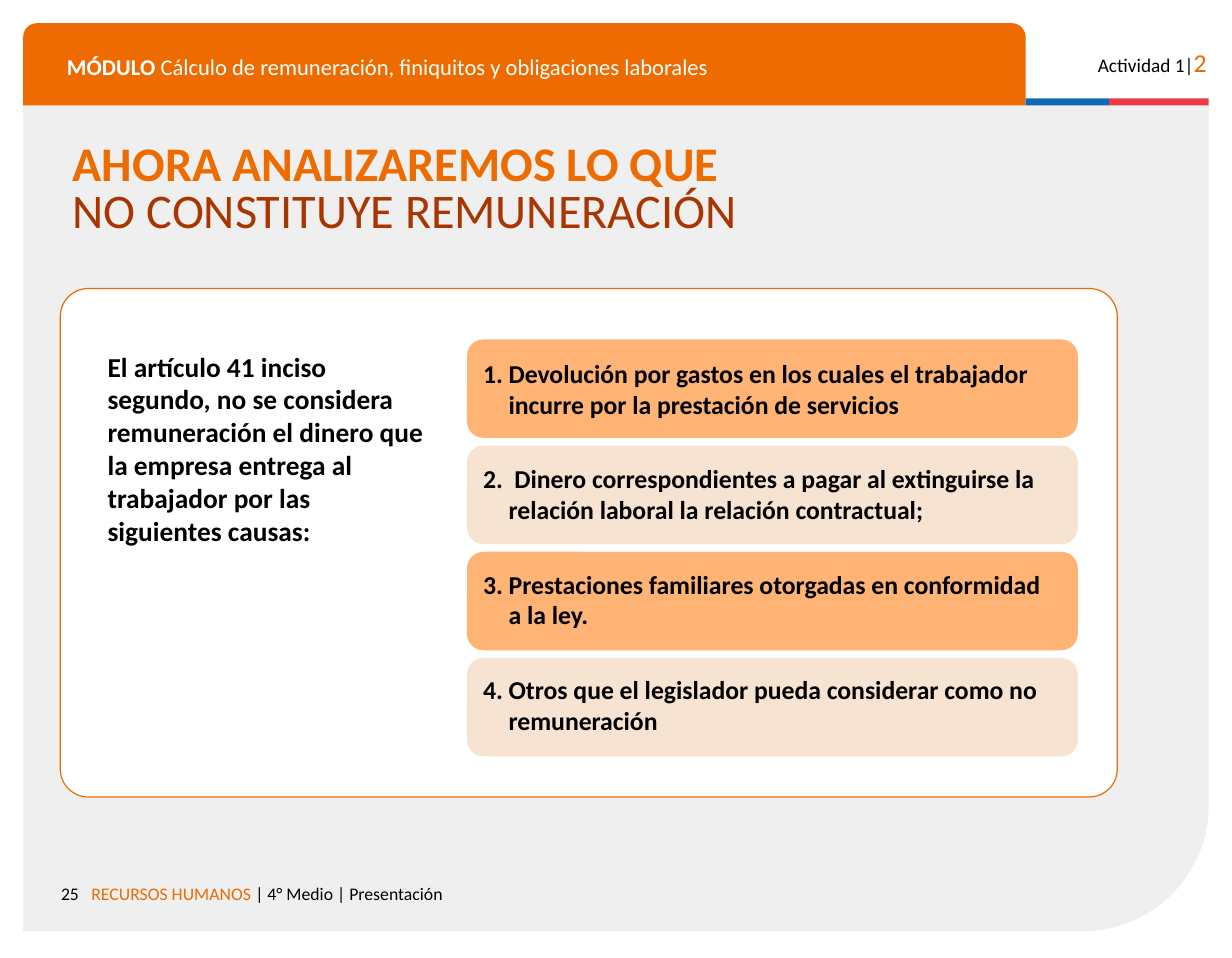
from lxml import etree
from pptx import Presentation
from pptx.dml.color import RGBColor
from pptx.enum import shapes, text
from pptx.oxml.ns import qn
from pptx.util import Emu, Pt

PX = 9144  # EMU per px, 100 px to the inch
SLIDE = (1063, 827)
FONT = "Calibri"
COLORS = {
    "black": "000000", "white": "FFFFFF", "panel": "EFEFEF", "orange": "ED6B00",
    "rust": "A93501", "blue": "0F69B4", "red": "EB3C46",
    "peach": "FFB375", "cream": "F7E3D1",
}

# Runs: text, size, colour, bold
MODULE = [("MÓDULO ", 14, "white", True),
          ("Cálculo de remuneración, finiquitos y obligaciones laborales", 14, "white", False)]
ACTIVITY = [("Actividad 1|", 12, "black", False), ("2", 16, "orange", False)]
TITLE = [("AHORA ANALIZAREMOS LO QUE", 30, "orange", True),
         ("NO CONSTITUYE REMUNERACIÓN", 30, "rust", False)]
PAGE = [("25", 11, "black", False)]
FOOTER = [("RECURSOS HUMANOS ", 11, "orange", False),
          ("| 4° Medio | Presentación", 11, "black", False)]
INTRO = [("El artículo 41 inciso segundo, no se considera remuneración el dinero "
          "que la empresa entrega al trabajador por las siguientes causas:", 17, "black", True)]
CAUSES = [
    "Devolución por gastos en los cuales el trabajador incurre por la prestación de servicios",
    " Dinero correspondientes a pagar al extinguirse la relación laboral la relación contractual;",
    "Prestaciones familiares otorgadas en conformidad a la ley.",
    "Otros que el legislador pueda considerar como no remuneración",
]

PANEL = (20, 90, 1023, 714)
CARD_LEFT, CARD_TOP, CARD_WIDTH, CARD_HEIGHT = 403, 293, 527, 85
CARD_PITCH = 275 / 3
INDENT = 22
RIGHT = text.PP_ALIGN.RIGHT
KIND = shapes.MSO_SHAPE

prs = Presentation()
prs.slide_width, prs.slide_height = (Emu(side * PX) for side in SLIDE)
slide = prs.slides.add_slide(prs.slide_layouts[6])


def rgb(name):
    return RGBColor.from_string(COLORS[name])


def emu(box):
    return [Emu(round(length * PX)) for length in box]


def add_block(kind, box, fill, adjustments=(), line=None):
    block = slide.shapes.add_shape(kind, *emu(box))
    block.shadow.inherit = False
    block.fill.solid()
    block.fill.fore_color.rgb = rgb(fill)
    for index, value in enumerate(adjustments):
        block.adjustments[index] = value
    if line:
        block.line.color.rgb = rgb(line)
        block.line.width = Pt(0.75)
    else:
        block.line.fill.background()
    return block


def add_frame(box, inset=10, anchor=text.MSO_ANCHOR.TOP):
    frame = slide.shapes.add_textbox(*emu(box)).text_frame
    frame.word_wrap = True
    frame.vertical_anchor = anchor
    frame.margin_left = frame.margin_right = Emu(10 * PX)
    frame.margin_top = frame.margin_bottom = Emu(inset * PX)
    return frame


def write(paragraph, runs, align=None, spacing=None, stacked=False):
    """Fill a paragraph with runs; stacked puts each run on its own line."""
    paragraph.alignment = align
    paragraph.line_spacing = spacing
    for index, (words, size, color, bold) in enumerate(runs):
        if stacked and index:
            paragraph.add_line_break()
        run = paragraph.add_run()
        run.text = words
        run.font.name = FONT
        run.font.size = Pt(size)
        run.font.bold = bold
        run.font.color.rgb = rgb(color)


def number(paragraph):
    """Give a paragraph a hanging automatic number."""
    props = paragraph._p.get_or_add_pPr()
    props.set("marL", str(INDENT * PX))
    props.set("indent", str(-INDENT * PX))
    color = etree.SubElement(props, qn("a:buClr"))
    etree.SubElement(color, qn("a:srgbClr"), val=COLORS["black"])
    etree.SubElement(props, qn("a:buAutoNum"), type="arabicPeriod")


# Page frame: the panel is turned a quarter so its round corner is bottom right
left, top, width, height = PANEL
turned = (left + (width - height) / 2, top + (height - width) / 2, height, width)
add_block(KIND.ROUND_1_RECTANGLE, turned, "panel", [0.153]).rotation = 90
add_block(KIND.ROUND_2_SAME_RECTANGLE, (20, 20, 865, 71), "orange", [0.167, 0])
add_block(KIND.RECTANGLE, (885, 85, 72, 6), "blue")
add_block(KIND.RECTANGLE, (957, 85, 86, 6), "red")
write(add_frame((20, 753, 58, 29)).paragraphs[0], PAGE, RIGHT)
write(add_frame((69, 753, 714, 38)).paragraphs[0], FOOTER)
write(add_frame((923, 30, 128, 38)).paragraphs[0], ACTIVITY, RIGHT)
write(add_frame((48, 38, 814, 35)).paragraphs[0], MODULE, spacing=0.9)

# Content
add_block(KIND.ROUNDED_RECTANGLE, (52, 249, 912, 439), "white", [0.055], "orange")
for row in range(len(CAUSES)):
    card = (CARD_LEFT, CARD_TOP + row * CARD_PITCH, CARD_WIDTH, CARD_HEIGHT)
    add_block(KIND.ROUNDED_RECTANGLE, card, ("peach", "cream")[row % 2], [0.167])

title = add_frame((53, 129, 990, 72), 5, text.MSO_ANCHOR.MIDDLE)
write(title.paragraphs[0], TITLE, spacing=0.8, stacked=True)
write(add_frame((83, 297, 297, 235), 5).paragraphs[0], INTRO)

causes = add_frame((407, 304, 502, 339), 5)
for row, cause in enumerate(CAUSES):
    item = causes.add_paragraph() if row else causes.paragraphs[0]
    write(item, [(cause, 16, "black", True)])
    if row:
        item.space_before = Pt(27)
    number(item)

prs.save("out.pptx")
